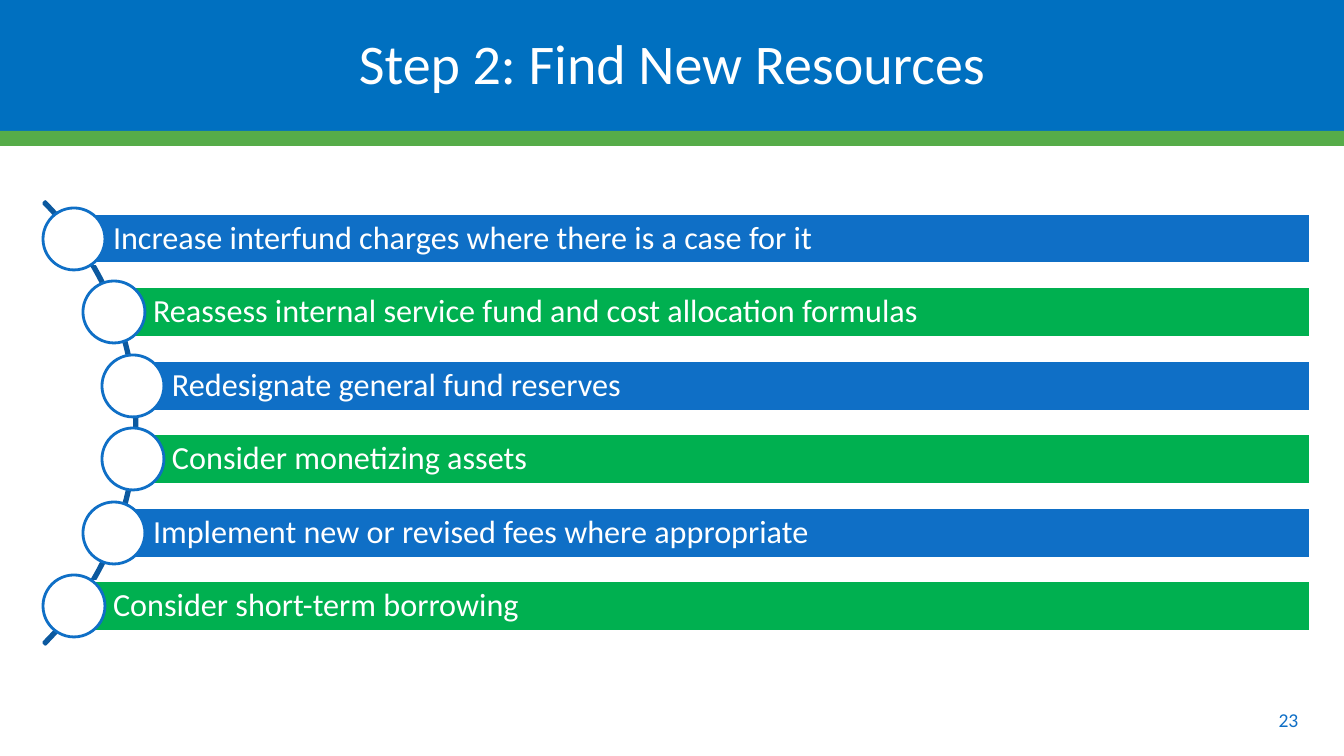
"""Build the "Find New Resources" slide: six labelled bars along an arc."""
import pptx
import pptx.util
import pptx.dml.color
import pptx.enum.shapes
import pptx.enum.text

PX = 12192000 / 1344
SHAPE = pptx.enum.shapes.MSO_SHAPE
ALIGN = pptx.enum.text.PP_ALIGN
BLUE, GREEN, WHITE = "0F6FC6", "00B050", "FFFFFF"


def paint(fmt, color):
    fmt.solid()
    fmt.fore_color.rgb = pptx.dml.color.RGBColor.from_string(color)


def write(sp, text, size, color, align, insets):
    tf = sp.text_frame
    tf.word_wrap = True
    tf.auto_size = pptx.enum.text.MSO_AUTO_SIZE.NONE
    tf.vertical_anchor = pptx.enum.text.MSO_ANCHOR.MIDDLE
    tf.margin_left, tf.margin_top, tf.margin_right, tf.margin_bottom = [
        round(n * PX) for n in insets]
    p = tf.paragraphs[0]
    p.alignment = align
    p.line_spacing = 0.9
    r = p.add_run()
    r.text = text
    r.font.size = pptx.util.Pt(size)
    r.font.name = "Calibri"
    paint(r.font.fill, color)


prs = pptx.Presentation()
prs.slide_width, prs.slide_height = round(1344 * PX), round(756 * PX)
s = prs.slides.add_slide(prs.slide_layouts[5])

title = s.shapes.title
title.left, title.top, title.width, title.height = [
    round(n * PX) for n in (0, -3, 1344, 134)]
paint(title.fill, "0070C0")
write(title, "Step 2: Find New Resources", 40, WHITE, ALIGN.CENTER, (10, 10, 10, 5))

items = [
    (74, "Increase interfund charges where there is a case for it"),
    (114, "Reassess internal service fund and cost allocation formulas"),
    (133, "Redesignate general fund reserves"),
    (133, "Consider monetizing assets"),
    (114, "Implement new or revised fees where appropriate"),
    (74, "Consider short-term borrowing"),
]
right, bar_h, dot = 1310, 50, 62

parts = [
    (SHAPE.RECTANGLE, (0, 131, 1344, 15), "56AC49", None, None),
    (SHAPE.BLOCK_ARC, (-489, 110, 626, 626), None, "0C599F", None),
]
for i, (x, text) in enumerate(items):
    y = 239 + round(73.4 * i)
    bar = (x, y - bar_h // 2, right - x, bar_h)
    circle = (x - dot // 2, y - dot // 2, dot, dot)
    parts.append((SHAPE.RECTANGLE, bar, (BLUE, GREEN)[i % 2], WHITE, text))
    parts.append((SHAPE.OVAL, circle, WHITE, BLUE, None))

for kind, box, fill, line, text in parts:
    sp = s.shapes.add_shape(kind, *[round(n * PX) for n in box])
    sp.shadow.inherit = False
    if fill:
        paint(sp.fill, fill)
    else:
        sp.fill.background()
    if line:
        paint(sp.line.fill, line)
        sp.line.width = pptx.util.Pt(2)
    else:
        sp.line.fill.background()
    if kind == SHAPE.BLOCK_ARC:
        for n, value in enumerate((189, 27, 0.004)):
            sp.adjustments[n] = value
    if text:
        write(sp, text, 23, WHITE, ALIGN.LEFT, (39, 6, 6, 6))

number = s.shapes.add_textbox(*[round(n * PX) for n in (1238, 701, 101, 40)])
write(number, "23", 14, BLUE, ALIGN.CENTER, (10, 5, 10, 5))

prs.save("out.pptx")
